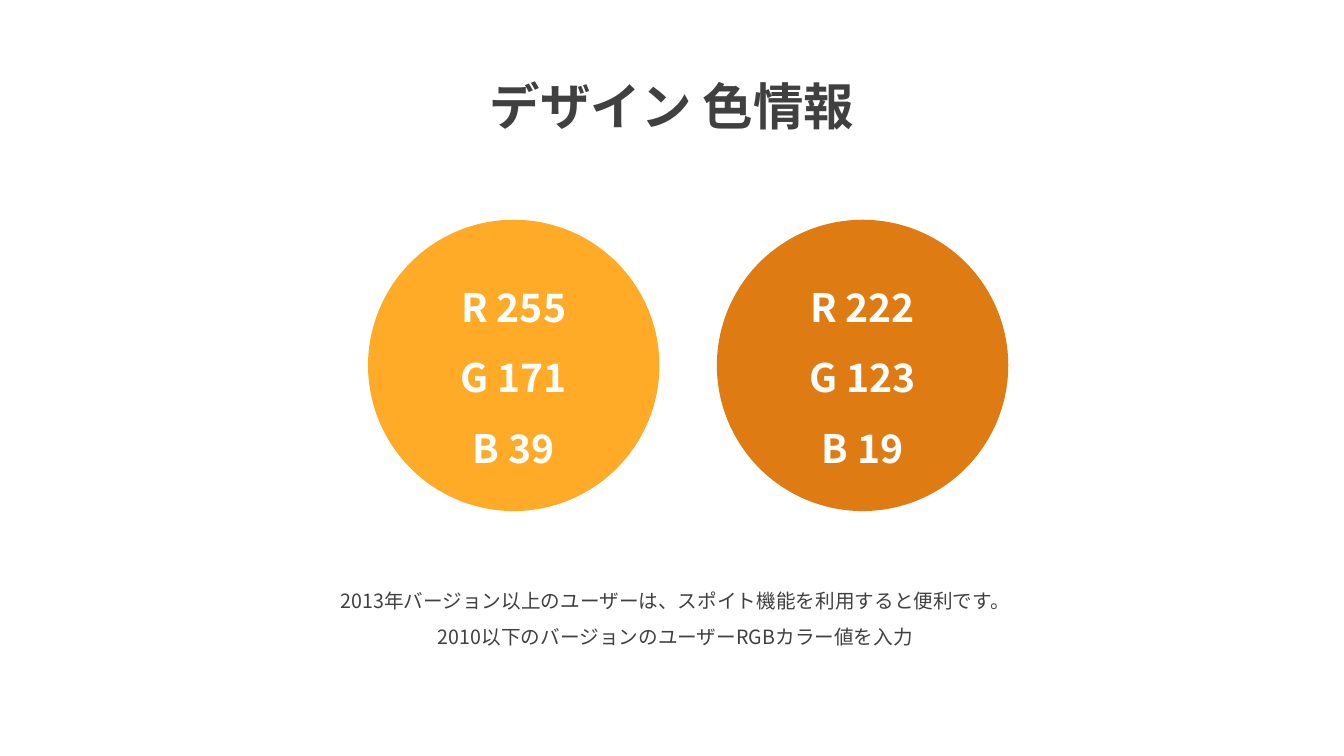
from lxml import etree
from pptx import Presentation
from pptx.dml.color import RGBColor
from pptx.enum.shapes import MSO_SHAPE
from pptx.enum.text import MSO_ANCHOR, MSO_AUTO_SIZE, PP_ALIGN
from pptx.oxml.ns import qn
from pptx.util import Inches, Pt

OVAL = MSO_SHAPE.OVAL
MIDDLE = MSO_ANCHOR.MIDDLE
TOP = MSO_ANCHOR.TOP
CENTER = PP_ALIGN.CENTER
GROW = MSO_AUTO_SIZE.SHAPE_TO_FIT_TEXT

FONT = "Noto Sans CJK KR"
WHITE = "FFFFFF"
DARK = "404040"

TITLE = "デザイン 色情報"
SWATCHES = ["FFAB27", "DE7B13"]
NOTES = [
    "2013年バージョン以上のユーザーは、スポイト機能を利用すると便利です。",
    "2010以下のバージョンのユーザーRGBカラー値を入力",
]


def color(value):
    return RGBColor.from_string(value)


def write_lines(shape, lines, size, text_color, bold, anchor):
    frame = shape.text_frame
    frame.word_wrap = True
    frame.vertical_anchor = anchor
    for index, line in enumerate(lines):
        paragraph = frame.add_paragraph() if index else frame.paragraphs[0]
        paragraph.alignment = CENTER
        paragraph.line_spacing = 1.5
        run = paragraph.add_run()
        run.text = line
        run.font.size = Pt(size)
        run.font.bold = bold
        run.font.color.rgb = color(text_color)
        run.font.name = FONT
        etree.SubElement(run.font._element, qn("a:ea"), typeface=FONT)


def add_text(slide, box, lines, size, bold=False):
    shape = slide.shapes.add_textbox(*map(Inches, box))
    write_lines(shape, lines, size, DARK, bold, TOP)
    shape.text_frame.auto_size = GROW


def add_swatches(slide, box, fills):
    left, top, width, diameter = box
    step = (width - diameter) / (len(fills) - 1)
    for index, fill in enumerate(fills):
        circle = slide.shapes.add_shape(
            OVAL, Inches(left + index * step), Inches(top),
            Inches(diameter), Inches(diameter))
        circle.shadow.inherit = False
        circle.fill.solid()
        circle.fill.fore_color.rgb = color(fill)
        circle.line.fill.background()
        channels = [f"{name} {value}" for name, value in zip("RGB", color(fill))]
        write_lines(circle, channels, 28, WHITE, True, MIDDLE)


def main():
    presentation = Presentation()
    presentation.slide_width = Inches(13.33)
    presentation.slide_height = Inches(7.5)
    slide = presentation.slides.add_slide(presentation.slide_layouts[6])
    add_swatches(slide, (3.65, 2.18, 6.35, 2.89), SWATCHES)
    add_text(slide, (4.24, 0.4, 4.85, 0.91), [TITLE], 36, bold=True)
    add_text(slide, (2.52, 5.68, 8.36, 0.77), NOTES, 14)
    presentation.save("out.pptx")


if __name__ == "__main__":
    main()
